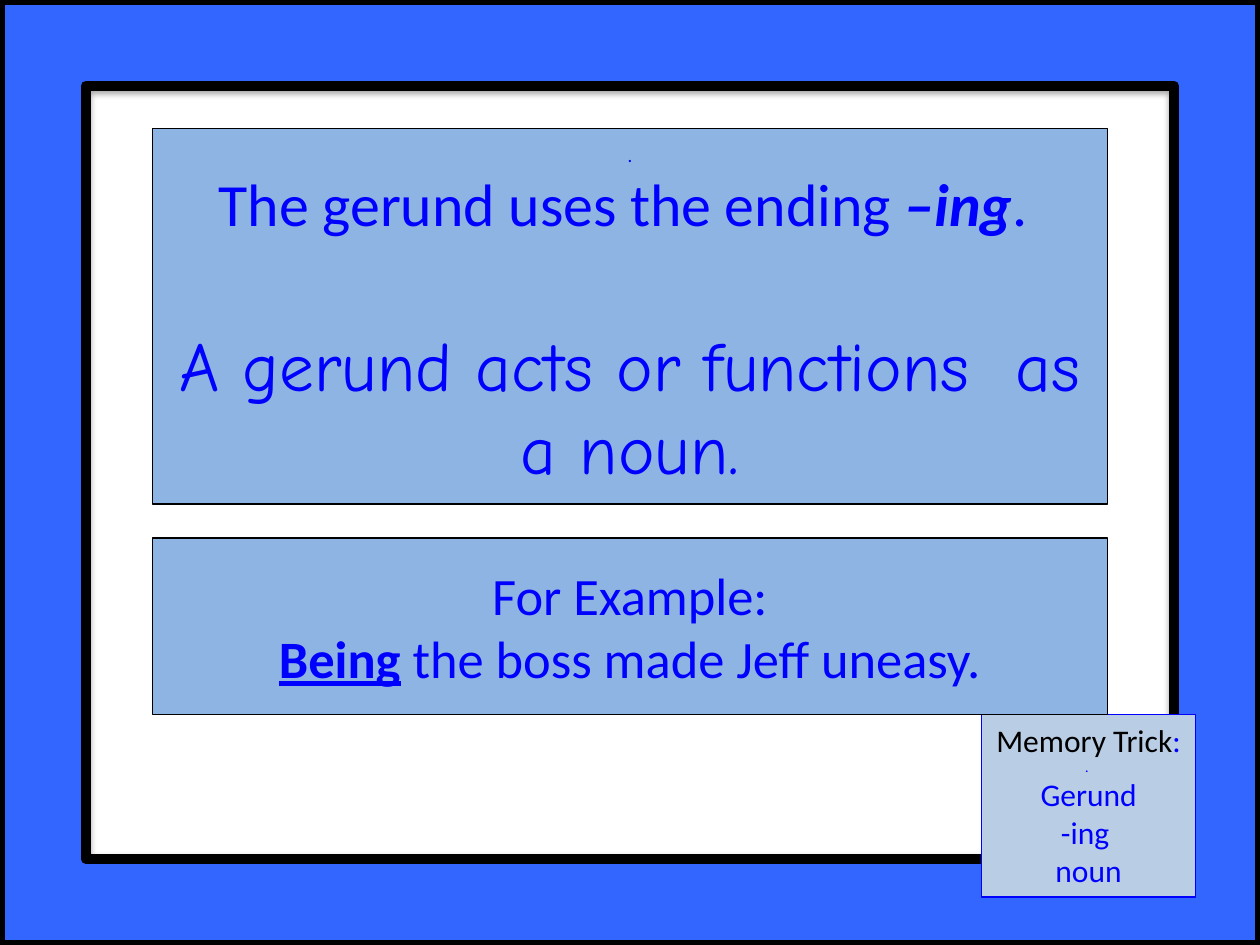
from lxml import etree
from pptx import Presentation
from pptx.dml.color import RGBColor
from pptx.enum import shapes, text
from pptx.oxml import ns
from pptx.util import Inches, Pt

BLACK, BLUE = "000000", "0000FF"
PANEL = "8EB4E3"
PANEL_LEFT, PANEL_WIDTH = Inches(1.21), Inches(7.58)


def color(value):
    return RGBColor.from_string(value)


def paint(shape, fill, line, width=0.75):
    shape.fill.solid()
    shape.fill.fore_color.rgb = color(fill)
    shape.line.color.rgb = color(line)
    shape.line.width = Pt(width)


def add_run(paragraph, words, size, font="Calibri", ink=BLUE, **styles):
    run = paragraph.add_run()
    run.text = words
    run.font.size = Pt(size)
    run.font.name = font
    run.font.color.rgb = color(ink)
    for name, value in styles.items():
        setattr(run.font, name, value)


def add_paragraph(frame, first=False, space_before=0):
    paragraph = frame.paragraphs[0] if first else frame.add_paragraph()
    paragraph.alignment = text.PP_ALIGN.CENTER
    paragraph.space_before = Pt(space_before)
    return paragraph


def add_box(slide, box, fill, line):
    shape = slide.shapes.add_shape(shapes.MSO_SHAPE.RECTANGLE, *box)
    shape.shadow.inherit = False
    paint(shape, fill, line)
    return shape


def place_rule(slide, box):
    title = slide.shapes.title
    title.left, title.top, title.width, title.height = box
    paint(title, PANEL, BLACK)
    frame = title.text_frame
    frame.auto_size = text.MSO_AUTO_SIZE.NONE
    frame.word_wrap = True
    frame.vertical_anchor = text.MSO_ANCHOR.MIDDLE
    add_run(add_paragraph(frame, first=True), ".", 10.8)
    ending = add_paragraph(frame)
    add_run(ending, "The gerund uses the ending ", 34.2)
    add_run(ending, "–ing", 34.2, bold=True, italic=True)
    add_run(ending, ". ", 34.2)
    function = add_paragraph(frame, space_before=48)
    add_run(function, "A gerund acts or functions  as a noun.", 39.6, "Comic Neue")


def place_frame(slide, box):
    border = slide.shapes.add_shape(shapes.MSO_SHAPE.FRAME, *box)
    border.adjustments[0] = 0.091
    paint(border, "3366FF", BLACK, 6)
    border.shadow.inherit = False
    effects = border._element.spPr.find(ns.qn("a:effectLst"))
    shadow = etree.SubElement(
        effects, ns.qn("a:outerShdw"), blurRad=str(Pt(3.1)), dist=str(Pt(1.8)),
        dir="5400000", rotWithShape="0")
    ink = etree.SubElement(shadow, ns.qn("a:srgbClr"), val=BLACK)
    etree.SubElement(ink, ns.qn("a:alpha"), val="35000")


def place_memory_trick(slide, box):
    frame = add_box(slide, box, "B9CDE5", BLUE).text_frame
    frame.word_wrap = False
    frame.auto_size = text.MSO_AUTO_SIZE.SHAPE_TO_FIT_TEXT
    frame.vertical_anchor = text.MSO_ANCHOR.TOP
    heading = add_paragraph(frame, first=True)
    add_run(heading, "Memory Trick", 18, ink=BLACK)
    add_run(heading, ":", 18)
    for words, size in ((". ", 8), ("Gerund", 18), ("-ing ", 18), ("noun", 18)):
        add_run(add_paragraph(frame), words, size)


def place_example(slide, box):
    frame = add_box(slide, box, PANEL, BLACK).text_frame
    frame.word_wrap = True
    frame.vertical_anchor = text.MSO_ANCHOR.MIDDLE
    add_run(add_paragraph(frame, first=True), "For Example:", 30)
    sentence = add_paragraph(frame)
    add_run(sentence, "Being", 30, bold=True, underline=True)
    add_run(sentence, " the boss made Jeff uneasy.", 30)


def main():
    presentation = Presentation()
    presentation.slide_width, presentation.slide_height = Inches(10), Inches(7.5)
    slide = presentation.slides.add_slide(presentation.slide_layouts[5])
    place_rule(slide, (PANEL_LEFT, Inches(1.02), PANEL_WIDTH, Inches(2.98)))
    place_frame(slide, (0, 0, presentation.slide_width, presentation.slide_height))
    place_memory_trick(slide, (Inches(7.79), Inches(5.67), Inches(1.7), Inches(1.45)))
    place_example(slide, (PANEL_LEFT, Inches(4.27), PANEL_WIDTH, Inches(1.4)))
    presentation.save("out.pptx")


if __name__ == "__main__":
    main()
